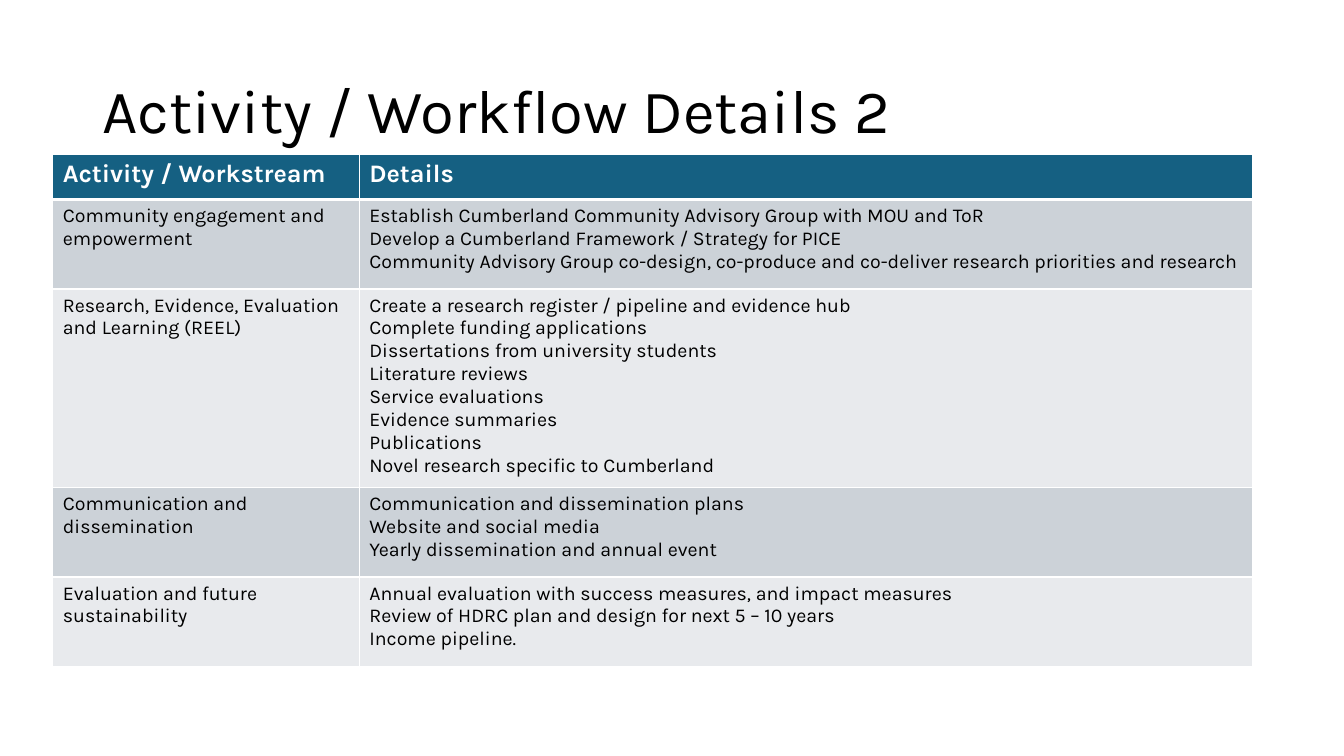
"""Build the slide of activity and workstream details."""
import pptx
import pptx.dml.color
import pptx.enum.text
import pptx.oxml
import pptx.oxml.ns
import pptx.util

Pt = pptx.util.Pt
COLOURS = {
    "black": "000000",
    "white": "FFFFFF",
    "header": "156082",
    "odd": "CCD2D8",
    "even": "E8EAED",
}
COLUMN_WIDTHS = [218.9, 637.9]
ROW_HEIGHTS = [32.1, 64, 124.6, 64, 64]
ROWS = [
    ("Activity / Workstream", ["Details"]),
    ("Community engagement and empowerment", [
        "Establish Cumberland Community Advisory Group with MOU and ToR",
        "Develop a Cumberland Framework / Strategy for PICE",
        "Community Advisory Group co-design, co-produce and co-deliver research priorities and research",
    ]),
    ("Research, Evidence, Evaluation and Learning (REEL)", [
        "Create a research register / pipeline and evidence hub",
        "Complete funding applications",
        "Dissertations from university students",
        "Literature reviews",
        "Service evaluations",
        "Evidence summaries",
        "Publications",
        "Novel research specific to Cumberland",
    ]),
    ("Communication and dissemination", [
        "Communication and dissemination plans",
        "Website and social media",
        "Yearly dissemination and annual event",
    ]),
    ("Evaluation and future sustainability", [
        "Annual evaluation with success measures, and impact measures",
        "Review of HDRC plan and design for next 5 – 10 years",
        "Income pipeline.",
    ]),
]


def write(frame, lines, size, colour="black", bold=False, spacing=1.0):
    """Fill a text frame with one paragraph per line."""
    for index, line in enumerate(lines):
        para = frame.add_paragraph() if index else frame.paragraphs[0]
        para.line_spacing = spacing
        span = para.add_run()
        span.text = line
        span.font.name = "Karla"
        span.font.size = Pt(size)
        span.font.bold = bold
        span.font.color.rgb = pptx.dml.color.RGBColor.from_string(COLOURS[colour])


def set_borders(cell, top, bottom):
    """Give a cell white borders, with top and bottom widths in points."""
    properties = cell._tc.get_or_add_tcPr()
    widths = {"lnL": 1, "lnR": 1, "lnT": top, "lnB": bottom}
    for position, (side, width) in enumerate(widths.items()):
        line = pptx.oxml.parse_xml(
            f'<a:{side} {pptx.oxml.ns.nsdecls("a")} w="{Pt(width)}"><a:solidFill>'
            f'<a:srgbClr val="{COLOURS["white"]}"/></a:solidFill></a:{side}>'
        )
        properties.insert(position, line)


deck = pptx.Presentation()
deck.slide_width, deck.slide_height = Pt(960), Pt(540)
page = deck.slides.add_slide(deck.slide_layouts[6])

title = page.shapes.add_textbox(Pt(66), Pt(28.75), Pt(828), Pt(104.4))
title.text_frame.word_wrap = True
title.text_frame.vertical_anchor = pptx.enum.text.MSO_ANCHOR.MIDDLE
write(title.text_frame, ["Activity / Workflow Details 2"], size=44, spacing=0.9)

table = page.shapes.add_table(
    len(ROWS), len(COLUMN_WIDTHS), Pt(37.7), Pt(110.4),
    Pt(sum(COLUMN_WIDTHS)), Pt(sum(ROW_HEIGHTS)),
).table
for column, width in zip(table.columns, COLUMN_WIDTHS):
    column.width = Pt(width)

for number, (activity, details) in enumerate(ROWS):
    table.rows[number].height = Pt(ROW_HEIGHTS[number])
    header = number == 0
    fill = "header" if header else "odd" if number % 2 else "even"
    for cell, lines in zip(table.rows[number].cells, ([activity], details)):
        cell.fill.solid()
        cell.fill.fore_color.rgb = pptx.dml.color.RGBColor.from_string(COLOURS[fill])
        set_borders(cell, top=3 if number == 1 else 1, bottom=3 if header else 1)
        write(cell.text_frame, lines, size=18 if header else 14,
              colour="white" if header else "black", bold=header)

deck.save("out.pptx")
